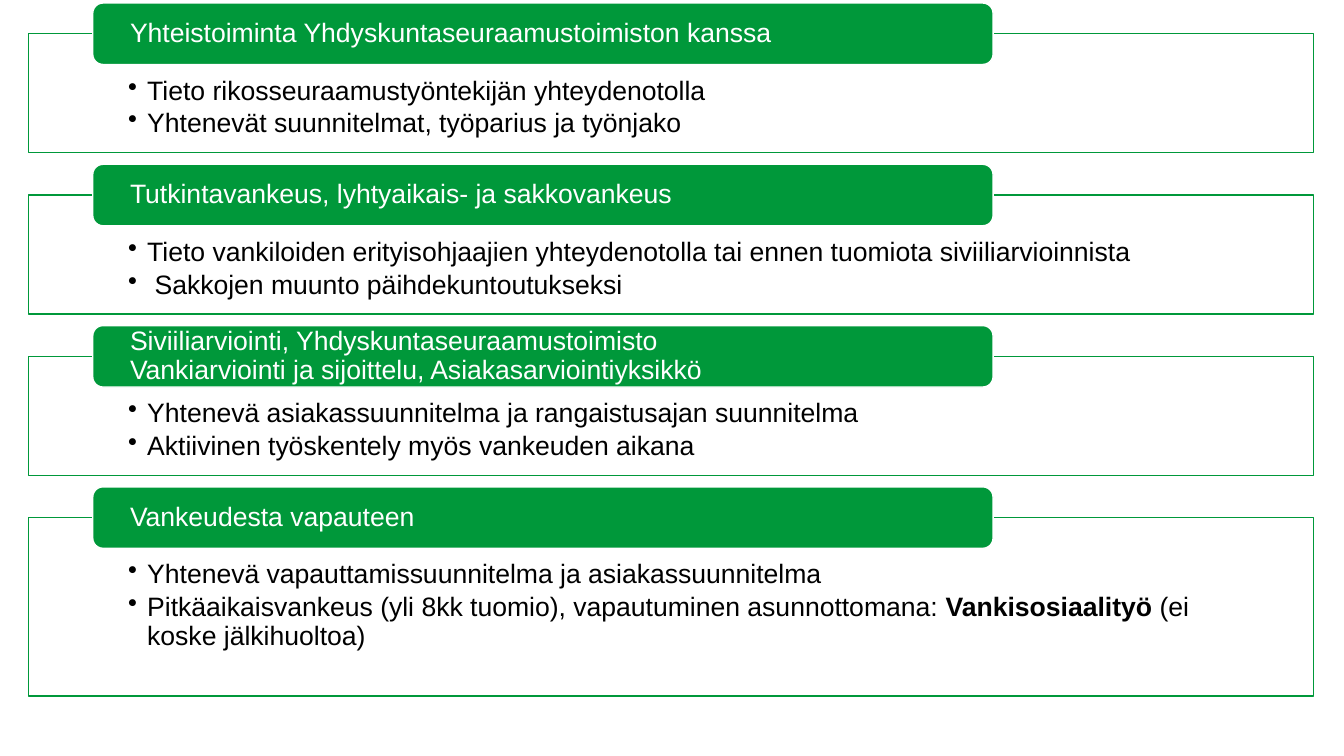
"""Build a slide of four stages, each a green heading over a framed list."""
from lxml import etree
from pptx import Presentation
from pptx.dml.color import RGBColor
from pptx.enum.shapes import MSO_SHAPE
from pptx.enum.text import MSO_ANCHOR, PP_ALIGN
from pptx.oxml.ns import qn
from pptx.util import Inches, Pt

RECTANGLE, ROUNDED = MSO_SHAPE.RECTANGLE, MSO_SHAPE.ROUNDED_RECTANGLE
TOP, MIDDLE = MSO_ANCHOR.TOP, MSO_ANCHOR.MIDDLE
LEFT = PP_ALIGN.LEFT

GREEN = RGBColor(0x00, 0x98, 0x3A)
WHITE = RGBColor(0xFF, 0xFF, 0xFF)
BLACK = RGBColor(0x00, 0x00, 0x00)

PAGE_WIDTH, PAGE_HEIGHT = 13.33, 7.5
FIRST_ROW, ROW_PITCH = 0.03, 1.6
HEADING_COLUMN, HEADING_WIDTH, HEADING_HEIGHT = 0.92, 8.93, 0.61
FRAME_COLUMN, FRAME_WIDTH = 0.28, 12.75
FRAME_DROP = HEADING_HEIGHT / 2
SHORT_FRAME, TALL_FRAME = 1.18, 1.77
BULLET_INDENT = 0.19

TEXT_FONT = {"name": "Arial", "size": Pt(19)}
FRAME_FORMAT = {
    "margin_left": Inches(0.99), "margin_right": Inches(0.99),
    "margin_top": Inches(0.43), "margin_bottom": Inches(0.15),
    "vertical_anchor": TOP, "word_wrap": True,
}
HEADING_FORMAT = {
    "margin_left": Inches(0.34), "margin_right": Inches(0.34),
    "margin_top": 0, "margin_bottom": 0,
    "vertical_anchor": MIDDLE, "word_wrap": True,
}
PARA_FORMAT = {"alignment": LEFT, "line_spacing": 0.9}

STAGES = [
    ("Yhteistoiminta Yhdyskuntaseuraamustoimiston kanssa", SHORT_FRAME, [
        ["Tieto rikosseuraamustyöntekijän yhteydenotolla"],
        ["Yhtenevät suunnitelmat, työparius ja työnjako"],
    ]),
    ("Tutkintavankeus, lyhtyaikais- ja sakkovankeus", SHORT_FRAME, [
        ["Tieto vankiloiden erityisohjaajien yhteydenotolla tai ennen "
         "tuomiota siviiliarvioinnista"],
        [" Sakkojen muunto päihdekuntoutukseksi"],
    ]),
    ("Siviiliarviointi, Yhdyskuntaseuraamustoimisto\n"
     "Vankiarviointi ja sijoittelu, Asiakasarviointiyksikkö", SHORT_FRAME, [
        ["Yhtenevä asiakassuunnitelma ja rangaistusajan suunnitelma"],
        ["Aktiivinen työskentely myös vankeuden aikana"],
    ]),
    ("Vankeudesta vapauteen", TALL_FRAME, [
        ["Yhtenevä vapauttamissuunnitelma ja asiakassuunnitelma"],
        ["Pitkäaikaisvankeus (yli 8kk tuomio), vapautuminen asunnottomana: ",
         "Vankisosiaalityö", " (ei koske jälkihuoltoa)"],
    ]),
]


def apply_format(target, values):
    """Set each named attribute of the target."""
    for name, value in values.items():
        setattr(target, name, value)


def add_box(page, kind, place, fill, line, text_format):
    """Add a filled and outlined shape ready for text."""
    box = page.shapes.add_shape(kind, *map(Inches, place))
    box.shadow.inherit = False
    box.fill.solid()
    box.fill.fore_color.rgb = fill
    box.line.color.rgb = line
    box.line.width = Pt(1)
    apply_format(box.text_frame, text_format)
    return box


def add_span(para, text, color, bold=False):
    """Add a run of text to a paragraph."""
    span = para.add_run()
    span.text = text
    apply_format(span.font, {**TEXT_FONT, "bold": bold})
    span.font.color.rgb = color


def make_bullet(para):
    """Give a paragraph a round bullet with a hanging indent."""
    properties = para._p.get_or_add_pPr()
    properties.set("marL", str(Inches(BULLET_INDENT)))
    properties.set("indent", str(-Inches(BULLET_INDENT)))
    etree.SubElement(properties, qn("a:buChar"), char="•")


def add_heading(page, top, text):
    """Add the green heading of a stage."""
    place = HEADING_COLUMN, top, HEADING_WIDTH, HEADING_HEIGHT
    box = add_box(page, ROUNDED, place, GREEN, WHITE, HEADING_FORMAT)
    para = box.text_frame.paragraphs[0]
    apply_format(para, PARA_FORMAT)
    for number, line in enumerate(text.split("\n")):
        if number:
            para.add_line_break()
        add_span(para, line, WHITE)


def add_frame(page, top, height, items):
    """Add the framed bullet list of a stage; every second span is bold."""
    place = FRAME_COLUMN, top, FRAME_WIDTH, height
    box = add_box(page, RECTANGLE, place, WHITE, GREEN, FRAME_FORMAT)
    color = box.fill._xPr.find(qn("a:solidFill"))[0]
    etree.SubElement(color, qn("a:alpha"), val="90000")
    for number, spans in enumerate(items):
        frame = box.text_frame
        para = frame.add_paragraph() if number else frame.paragraphs[0]
        apply_format(para, {**PARA_FORMAT, "level": 1, "space_after": Pt(2.85)})
        make_bullet(para)
        for position, text in enumerate(spans):
            add_span(para, text, BLACK, bold=position % 2 == 1)


def main():
    """Build and save the deck."""
    deck = Presentation()
    deck.slide_width, deck.slide_height = Inches(PAGE_WIDTH), Inches(PAGE_HEIGHT)
    page = deck.slides.add_slide(deck.slide_layouts[6])
    for row, (heading, height, items) in enumerate(STAGES):
        top = FIRST_ROW + row * ROW_PITCH
        add_frame(page, top + FRAME_DROP, height, items)
        add_heading(page, top, heading)
    deck.save("out.pptx")


if __name__ == "__main__":
    main()
